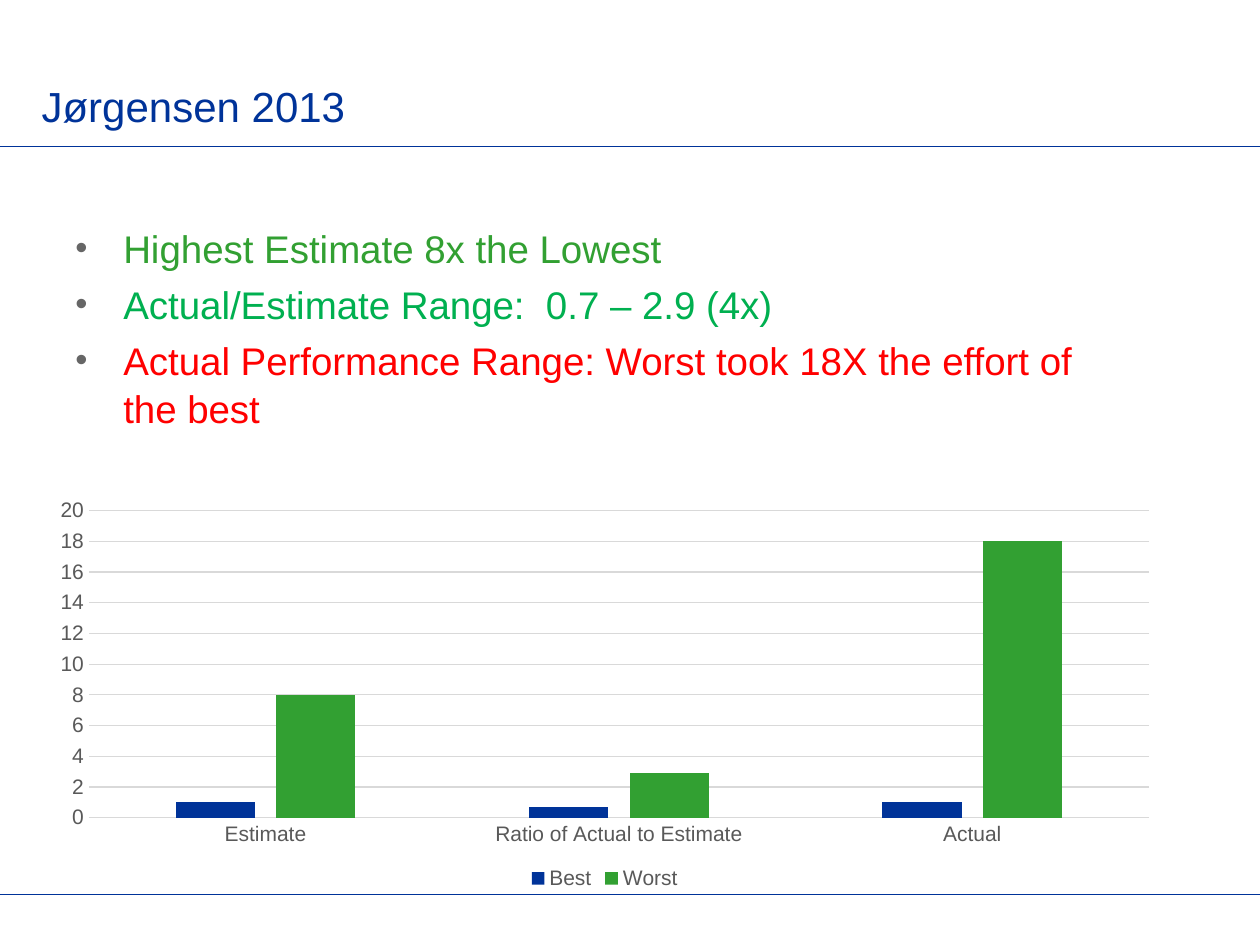
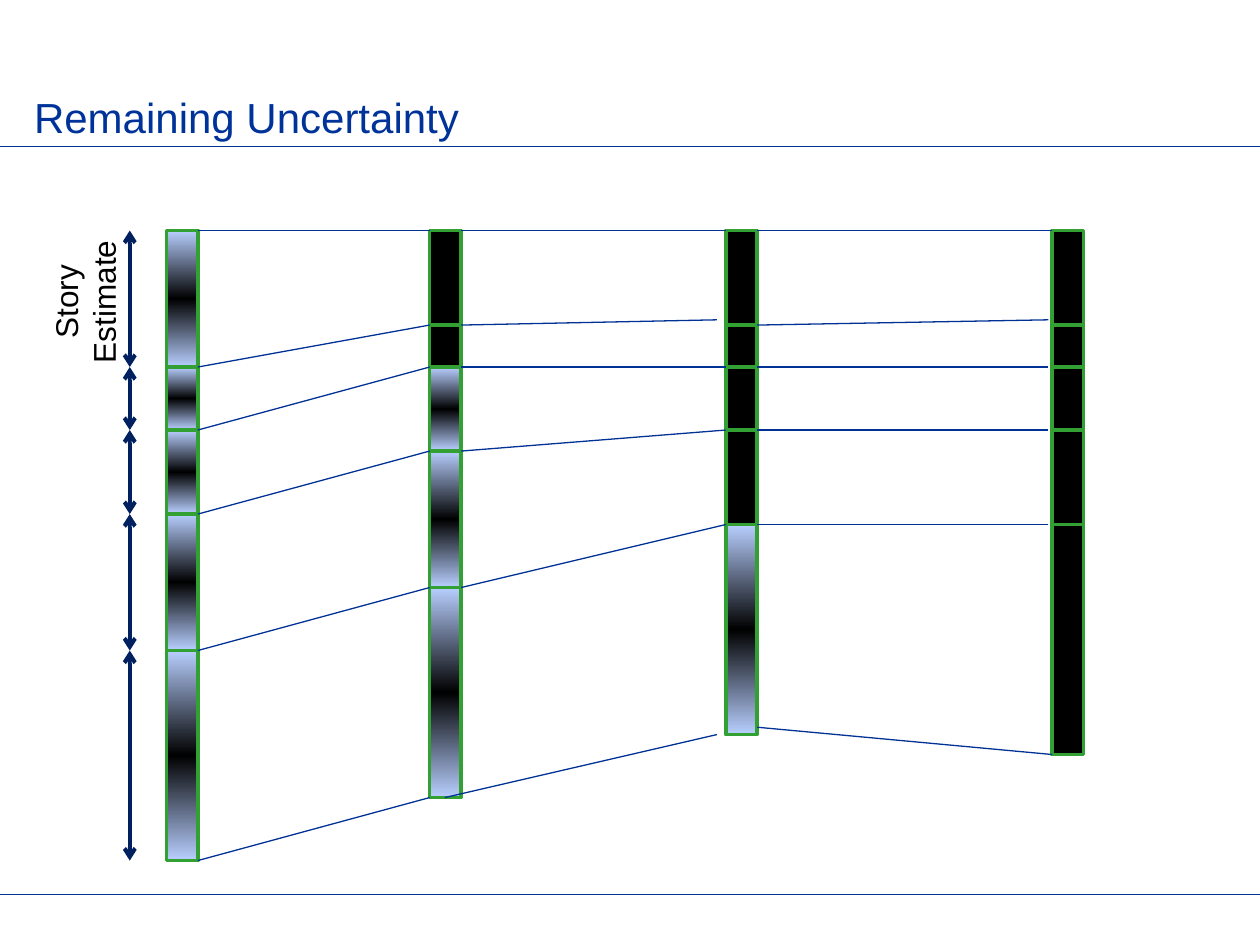
from copy import deepcopy
from dataclasses import dataclass

from lxml import etree
from pptx import Presentation
from pptx.chart.data import CategoryChartData
from pptx.dml.color import RGBColor
from pptx.enum.chart import XL_CHART_TYPE, XL_LEGEND_POSITION, XL_TICK_MARK
from pptx.enum.shapes import MSO_CONNECTOR, MSO_SHAPE
from pptx.enum.text import MSO_ANCHOR, PP_ALIGN
from pptx.oxml.ns import qn
from pptx.util import Inches, Pt

COLUMN = XL_CHART_TYPE.COLUMN_CLUSTERED
BOTTOM = XL_LEGEND_POSITION.BOTTOM
NO_TICK = XL_TICK_MARK.NONE
LINE = MSO_CONNECTOR.STRAIGHT
RECT = MSO_SHAPE.RECTANGLE
LOW = MSO_ANCHOR.BOTTOM
LEFT, CENTER = PP_ALIGN.LEFT, PP_ALIGN.CENTER


@dataclass(frozen=True)
class Theme:
    """Colours, font and type sizes of the deck."""
    font: str = "Arial"
    navy: str = "003399"
    link: str = "003296"
    arrow: str = "002060"
    green: str = "32A032"
    mint: str = "00B050"
    red: str = "FF0000"
    black: str = "000000"
    pale: str = "B8CFFF"
    dot: str = "666666"
    grey: str = "595959"
    grid: str = "D9D9D9"
    head: int = 24
    body: int = 22
    label: int = 18
    small: int = 12


@dataclass(frozen=True)
class Box:
    """A region of the slide, in inches."""
    x: float
    y: float
    w: float
    h: float

    def emu(self):
        """Return the four lengths for a shape call."""
        return [Inches(v) for v in (self.x, self.y, self.w, self.h)]


T = Theme()
PAGE = Box(0, 0, 10, 7.5)
RULES = (1.16, 7.1)
ROW = 1 / 12
BAR = 0.25

POINTS = (
    ("Highest Estimate 8x the Lowest", T.green),
    ("Actual/Estimate Range:  0.7 – 2.9 (4x)", T.mint),
    ("Actual Performance Range: Worst took 18X the effort of the best", T.red),
)
CATS = ("Estimate", "Ratio of Actual to Estimate", "Actual")
SERIES = (("Best", (1, 0.7, 1), T.navy), ("Worst", (8, 2.9, 18), T.green))

# Each bar: left offset, edges in rows, number of finished stories.
BARS = (
    (0, (0, 13, 19, 27, 40, 60), 0),
    (2.09, (0, 9, 13, 21, 34, 54), 2),
    (4.44, (0, 9, 13, 19, 28, 48), 4),
    (7.03, (0, 9, 13, 19, 28, 49.9), 5),
)
# Each link: start row, end row, shift of its start, shift of its end.
LINKS = (
    [(a, b, 0, 0) for a, b in zip(BARS[0][1], BARS[1][1])],
    ((0, 0, 0, 0), (9, 8.5, 0, -0.07), (13, 13, 0, 0), (21, 19, 0, 0),
     (34, 28, 0, 0), (54, 48, -0.13, -0.07)),
    ((0, 0, 0, 0), (9, 8.5, 0, -0.03), (13, 13, 0, -0.03), (19, 19, 0, -0.03),
     (28, 28, 0, -0.03), (47.3, 49.9, 0, 0)),
)


def rgb(code):
    """Turn a hex code into a colour."""
    return RGBColor.from_string(code)


def style(font, size, color):
    """Set the face, size and colour of a font."""
    font.name, font.size = T.font, Pt(size)
    font.color.rgb = rgb(color)


def stroke(slide, start, end, color, width, heads=False):
    """Draw a straight line, with arrowheads at both ends if asked."""
    line = slide.shapes.add_connector(LINE, *(Inches(v) for v in start + end))
    line.line.color.rgb = rgb(color)
    line.line.width = Pt(width)
    props = line.element.spPr
    if heads:
        for tag in ("a:headEnd", "a:tailEnd"):
            etree.SubElement(props.find(qn("a:ln")), qn(tag), type="arrow")
    etree.SubElement(props, qn("a:effectLst"))


def start_slide(deck, text, box):
    """Add a slide with its title and the two rules."""
    slide = deck.slides.add_slide(deck.slide_layouts[5])
    for y in RULES:
        stroke(slide, (0, y), (PAGE.w, y), T.navy, 0.5)
    title = slide.shapes.title
    title.left, title.top, title.width, title.height = box.emu()
    frame = title.text_frame
    frame.text = text
    frame.vertical_anchor = LOW
    para = frame.paragraphs[0]
    para.alignment = LEFT
    style(para.font, T.head, T.navy)
    return slide


def add_dot(para):
    """Give a paragraph a hanging round bullet."""
    props = para._p.get_or_add_pPr()
    props.set("marL", str(Inches(0.38)))
    props.set("indent", str(-Inches(0.38)))
    color = etree.SubElement(props, qn("a:buClr"))
    etree.SubElement(color, qn("a:srgbClr"), val=T.dot)
    etree.SubElement(props, qn("a:buSzPct"), val="90000")
    etree.SubElement(props, qn("a:buFont"), typeface=T.font)
    etree.SubElement(props, qn("a:buChar"), char="•")


def add_points(slide, box):
    """Write the bullet list in its box."""
    frame = slide.shapes.add_textbox(*box.emu()).text_frame
    frame.word_wrap = True
    for num, (text, color) in enumerate(POINTS):
        para = frame.add_paragraph() if num else frame.paragraphs[0]
        para.text = text
        add_dot(para)
        para.line_spacing = 1.04
        if num:
            para.space_before = Pt(4.5)
        style(para.font, T.body, color)


def add_columns(slide, box):
    """Draw the chart of best and worst results."""
    data = CategoryChartData()
    data.categories = CATS
    for name, vals, _ in SERIES:
        data.add_series(name, vals)
    chart = slide.shapes.add_chart(COLUMN, *box.emu(), data).chart
    chart.has_title = False
    style(chart.font, T.small, T.grey)
    chart.has_legend = True
    chart.legend.position = BOTTOM
    chart.legend.include_in_layout = False
    plot = chart.plots[0]
    plot.gap_width, plot.overlap, plot.vary_by_categories = 219, -27, False
    for item, (_, _, color) in zip(plot.series, SERIES):
        item.format.fill.solid()
        item.format.fill.fore_color.rgb = rgb(color)
    cat, val = chart.category_axis, chart.value_axis
    for axis in (cat, val):
        axis.major_tick_mark = axis.minor_tick_mark = NO_TICK
    val.minimum_scale, val.maximum_scale, val.major_unit = 0, 20, 2
    val.format.line.fill.background()
    for line in (cat.format.line, val.major_gridlines.format.line):
        line.color.rgb = rgb(T.grid)
        line.width = Pt(0.75)


def add_part(slide, box, done):
    """Draw one story of a bar, solid when done and shaded when open."""
    part = slide.shapes.add_shape(RECT, *box.emu())
    part.shadow.inherit = False
    part.line.color.rgb = rgb(T.green)
    part.line.width = Pt(2)
    fill = part.fill
    if done:
        fill.solid()
        fill.fore_color.rgb = rgb(T.black)
        return
    fill.gradient()
    fill.gradient_angle = 90
    stops = part.element.spPr.find(".//" + qn("a:gsLst"))
    stops.append(deepcopy(stops[-1]))
    for num, stop in enumerate(fill.gradient_stops):
        stop.position = num / 2
        stop.color.rgb = rgb((T.pale, T.black, T.pale)[num])


def add_bars(slide, box):
    """Draw the bars and the lines that link them."""
    for x, rows, done in BARS:
        for num, (top, end) in enumerate(zip(rows, rows[1:])):
            spot = Box(box.x + x, box.y + top * ROW, BAR, (end - top) * ROW)
            add_part(slide, spot, num < done)
    for prev, post, links in zip(BARS, BARS[1:], LINKS):
        for top, end, near, far in links:
            start = (box.x + prev[0] + BAR + near, box.y + top * ROW)
            stop = (box.x + post[0] + far, box.y + end * ROW)
            stroke(slide, start, stop, T.link, 0.75)


def add_scale(slide, box):
    """Draw the story arrows and their turned label."""
    rows = BARS[0][1]
    x = box.x + box.w
    for top, end in zip(rows, rows[1:]):
        ends = (x, box.y + top * ROW), (x, box.y + end * ROW)
        stroke(slide, *ends, T.arrow, 2.25, True)
    spot = Box(box.x - 0.3, box.y + 0.21, 1.31, 0.71)
    label = slide.shapes.add_textbox(*spot.emu())
    label.rotation = 270
    frame = label.text_frame
    frame.word_wrap = True
    para = frame.paragraphs[0]
    para.text = "Story Estimate"
    para.alignment = CENTER
    style(para.font, T.label, T.black)


def main():
    """Build both slides and save the deck."""
    deck = Presentation()
    deck.slide_width, deck.slide_height = Inches(PAGE.w), Inches(PAGE.h)
    slide = start_slide(deck, "Jørgensen 2013", Box(0.23, 0.15, 8.28, 0.94))
    add_points(slide, Box(0.5, 1.72, 8.42, 2))
    add_columns(slide, Box(0.3, 3.9, 9, 3.2))
    slide = start_slide(deck, "Remaining Uncertainty",
                        Box(0.17, -0.07, 9.65, 1.25))
    add_bars(slide, Box(1.32, 1.83, 7.28, 5))
    add_scale(slide, Box(0.32, 1.83, 0.71, 5))
    deck.save("out.pptx")


if __name__ == "__main__":
    main()
